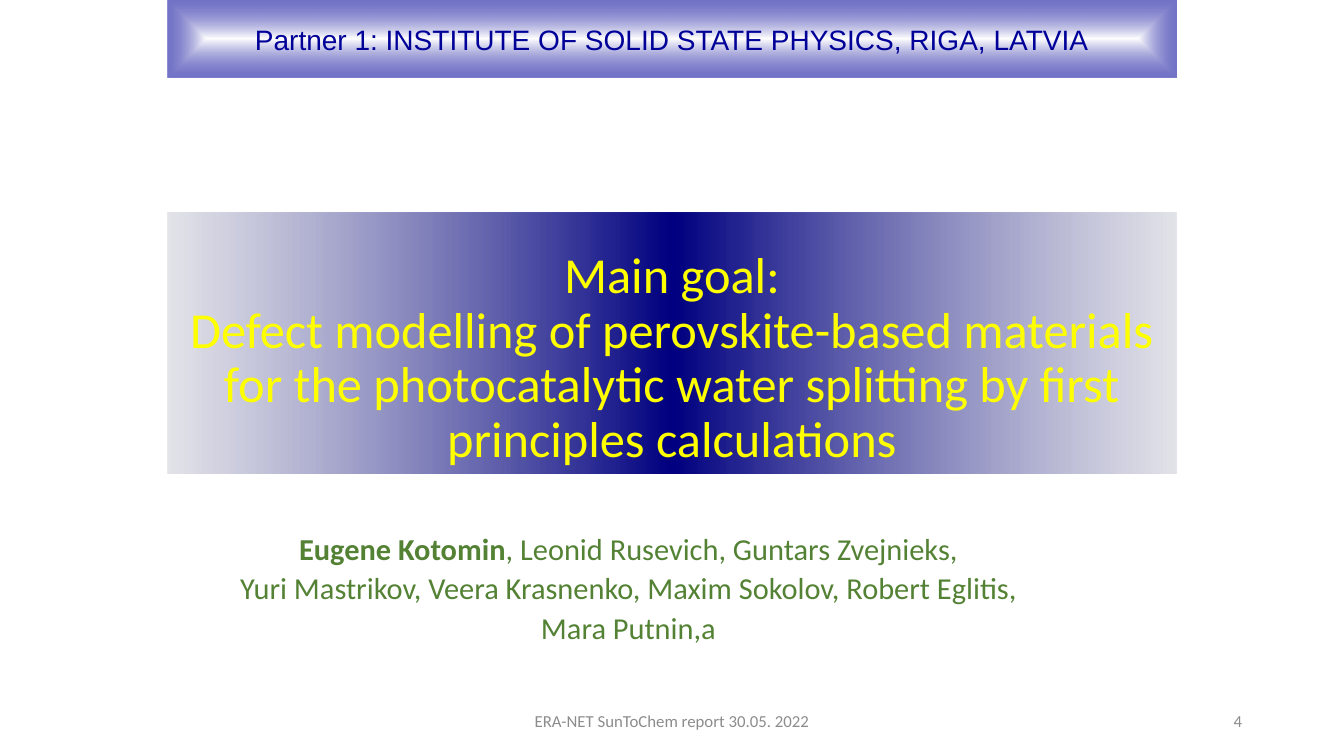
from lxml.etree import SubElement
from pptx import Presentation
from pptx.dml.color import RGBColor
from pptx.enum.shapes import MSO_SHAPE
from pptx.enum.text import MSO_ANCHOR, PP_ALIGN
from pptx.oxml.ns import qn
from pptx.util import Pt

PX = 914400 / 100.8
COLORS = {
    "white": "FFFFFF",
    "blue": "000099",
    "navy": "000080",
    "mist": "D4D4DD",
    "yellow": "FFFF00",
    "green": "548235",
    "gray": "8C8C8C",
}


def scale(box):
    return [round(n * PX) for n in box]


def write(shape, lines, size, color, font="Calibri", align=PP_ALIGN.CENTER,
          anchor=MSO_ANCHOR.MIDDLE, gap=1.0, before=0):
    """Fill a shape with lines, each a list of (text, bold) runs."""
    frame = shape.text_frame
    frame.word_wrap = True
    frame.vertical_anchor = anchor
    for i, line in enumerate(lines):
        para = frame.add_paragraph() if i else frame.paragraphs[0]
        para.alignment = align
        para.line_spacing = gap
        para.space_before = Pt(before)
        for text, bold in line:
            run = para.add_run()
            run.text = text
            run.font.name = font
            run.font.size = Pt(size)
            run.font.bold = bold
            run.font.color.rgb = RGBColor.from_string(COLORS[color])


def label(slide, box, lines, **style):
    write(slide.shapes.add_textbox(*scale(box)), lines, **style)


def panel(slide, box, stops, radial=False):
    """Add a rectangle shaded through (percent, color, opacity) stops."""
    shape = slide.shapes.add_shape(MSO_SHAPE.RECTANGLE, *scale(box))
    shape.shadow.inherit = False
    shape.line.fill.background()
    shape.fill.gradient()
    grad = shape.element.spPr.find(qn("a:gradFill"))
    for child in list(grad):
        grad.remove(child)
    group = SubElement(grad, qn("a:gsLst"))
    for place, color, alpha in stops:
        stop = SubElement(group, qn("a:gs"), pos=str(place * 1000))
        tint = SubElement(stop, qn("a:srgbClr"), val=COLORS[color])
        if alpha < 100:
            SubElement(tint, qn("a:alpha"), val=str(alpha * 1000))
    if radial:
        way = SubElement(grad, qn("a:path"), path="shape")
        SubElement(way, qn("a:fillToRect"),
                   {side: "50000" for side in "ltrb"})
    else:
        SubElement(grad, qn("a:lin"), ang="0", scaled="1")
    return shape


def banner(slide, box):
    shape = panel(slide, box, [(0, "white", 100), (100, "blue", 55)], True)
    text = "Partner 1: INSTITUTE OF SOLID STATE PHYSICS, RIGA, LATVIA"
    write(shape, [[(text, False)]], size=20, color="blue", font="Arial")


def goal(slide, box):
    shape = panel(slide, box, [(0, "mist", 65), (50, "navy", 100),
                               (100, "mist", 65)])
    lines = ["Main goal:",
             "Defect modelling of perovskite-based materials for the "
             "photocatalytic water splitting by first principles calculations"]
    write(shape, [[(line, False)] for line in lines], size=36,
          color="yellow", anchor=MSO_ANCHOR.BOTTOM, gap=0.9)


def team(slide, box):
    lines = [
        [("Eugene Kotomin", True),
         (", Leonid Rusevich, Guntars Zvejnieks,", False)],
        [("Yuri Mastrikov, Veera Krasnenko, Maxim Sokolov, Robert Eglitis,",
          False)],
        [("Mara Putnin,a", False)],
    ]
    label(slide, box, lines, size=21.7, color="green",
          anchor=MSO_ANCHOR.TOP, gap=0.7, before=10)


def footer(slide, box):
    left, top, width, height = box
    note = 454
    page = 302
    label(slide, (left + (width - note) // 2, top, note, height),
          [[("ERA-NET SunToChem report 30.05. 2022", False)]],
          size=12, color="gray")
    label(slide, (left + width - page, top, page, height),
          [[("4", False)]], size=12, color="gray", align=PP_ALIGN.RIGHT)


def main():
    deck = Presentation()
    deck.slide_width, deck.slide_height = scale((1344, 756))
    slide = deck.slides.add_slide(deck.slide_layouts[6])
    team(slide, (136, 535, 985, 119))
    banner(slide, (168, 0, 1008, 78))
    goal(slide, (168, 213, 1008, 260))
    footer(slide, (92, 701, 1160, 40))
    deck.save("out.pptx")


if __name__ == "__main__":
    main()
